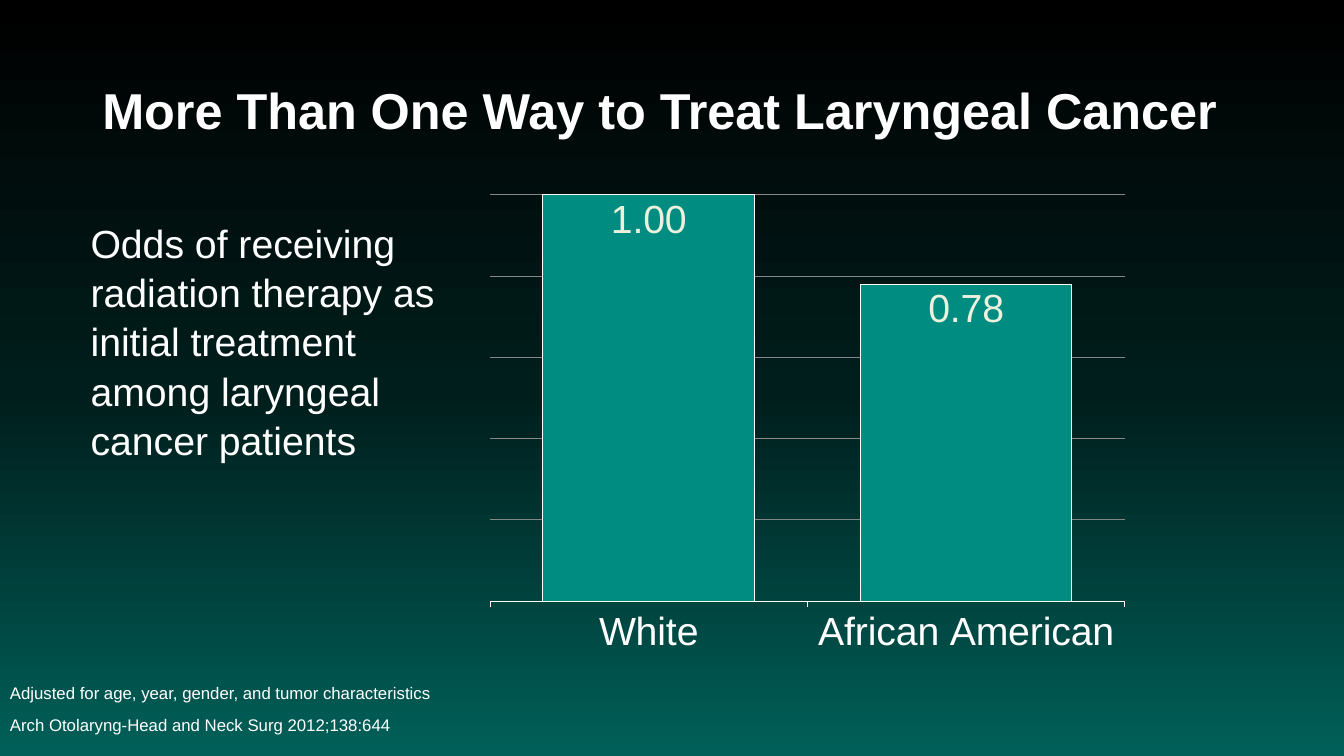
import copy
import dataclasses

import lxml.etree
import pptx
import pptx.chart.data
import pptx.dml.color
import pptx.enum.chart
import pptx.enum.text
import pptx.oxml
import pptx.oxml.ns
import pptx.util

Pt = pptx.util.Pt
COLORS = {
    "top": "000000",
    "middle": "001E1C",
    "bottom": "006059",
    "text": "FFFFFF",
    "bar": "008C81",
    "value": "EBF1DD",
    "grid": "868686",
}
GRADIENT = [(0, "top"), (0.52, "middle"), (1, "bottom")]
ODDS = {"White": 1.0, "African American": 0.78}


@dataclasses.dataclass(frozen=True)
class TextBlock:
    frame: tuple[float, float, float, float]
    lines: tuple[str, ...]
    size: float
    spacing: float
    bold: bool = False
    gap: float = 0
    middle: bool = True


BLOCKS = [
    TextBlock((66, 28.8, 828, 104.4), ("More Than One Way to Treat Laryngeal Cancer",),
              36, 0.9, bold=True),
    TextBlock((0, 473.8, 648, 66.2),
              ("Adjusted for age, year, gender, and tumor characteristics",
               "Arch Otolaryng-Head and Neck Surg 2012;138:644"),
              12, 0.9, gap=10),
    TextBlock((57.6, 151.2, 275, 177.1),
              ("Odds of receiving radiation therapy as initial treatment "
               "among laryngeal cancer patients",),
              28, 1.05, middle=False),
]


def color(name: str) -> pptx.dml.color.RGBColor:
    return pptx.dml.color.RGBColor.from_string(COLORS[name])


def set_font(font, size: float, name: str = "text", bold: bool = False) -> None:
    for key, value in {"name": "Arial", "size": Pt(size), "bold": bold}.items():
        setattr(font, key, value)
    font.color.rgb = color(name)


def set_line(line, name: str) -> None:
    line.color.rgb = color(name)
    line.width = Pt(0.75)


def paint_background(page) -> None:
    fill = page.background.fill
    fill.gradient()
    fill.gradient_angle = 270
    stops = page._element.find(".//" + pptx.oxml.ns.qn("a:gsLst"))
    stops.insert(1, copy.deepcopy(stops[0]))
    for stop, (position, name) in zip(fill.gradient_stops, GRADIENT):
        stop.position = position
        stop.color.rgb = color(name)


def add_text(page, block: TextBlock) -> None:
    box = page.shapes.add_textbox(*map(Pt, block.frame))
    anchors = pptx.enum.text.MSO_ANCHOR
    sizing = pptx.enum.text.MSO_AUTO_SIZE
    frame_format = {
        "word_wrap": True,
        "auto_size": sizing.NONE if block.middle else sizing.SHAPE_TO_FIT_TEXT,
        "vertical_anchor": anchors.MIDDLE if block.middle else anchors.TOP,
    }
    for key, value in frame_format.items():
        setattr(box.text_frame, key, value)
    for index, line in enumerate(block.lines):
        para = box.text_frame.add_paragraph() if index else box.text_frame.paragraphs[0]
        para.line_spacing = block.spacing
        para.space_before = Pt(block.gap if index else 0)
        span = para.add_run()
        span.text = line
        set_font(span.font, block.size, bold=block.bold)


def fix_plot_area(chart) -> None:
    area = chart._chartSpace.chart.plotArea
    for old in area.findall(pptx.oxml.ns.qn("c:layout")):
        area.remove(old)
    layout = pptx.oxml.parse_xml(f"<c:layout {pptx.oxml.ns.nsdecls('c')}/>")
    manual = lxml.etree.SubElement(layout, pptx.oxml.ns.qn("c:manualLayout"))
    settings = {"layoutTarget": "inner", "xMode": "edge", "yMode": "edge",
                "x": "0.02", "y": "0.02", "w": "0.96", "h": "0.85"}
    for key, value in settings.items():
        lxml.etree.SubElement(manual, pptx.oxml.ns.qn(f"c:{key}")).set("val", value)
    area.insert(0, layout)


def add_odds_chart(page) -> None:
    enums = pptx.enum.chart
    data = pptx.chart.data.CategoryChartData()
    data.categories = list(ODDS)
    data.add_series("Series 1", list(ODDS.values()))
    chart = page.shapes.add_chart(enums.XL_CHART_TYPE.COLUMN_CLUSTERED,
                                  *map(Pt, (340.6, 132.5, 472.3, 341.3)), data).chart
    chart.has_legend = False
    chart.has_title = False
    chart.font.name = "Lato"
    chart.font.size = Pt(20)
    fix_plot_area(chart)

    # Axes
    categories = chart.category_axis
    categories.major_tick_mark = enums.XL_TICK_MARK.OUTSIDE
    set_font(categories.tick_labels.font, 28)
    set_line(categories.format.line, "text")
    scale = {"minimum_scale": 0, "maximum_scale": 1, "major_unit": 0.2,
             "has_major_gridlines": True, "visible": False}
    for key, value in scale.items():
        setattr(chart.value_axis, key, value)
    set_line(chart.value_axis.major_gridlines.format.line, "grid")

    # Bars and their values
    plot = chart.plots[0]
    plot.gap_width = 50
    plot.vary_by_categories = False
    bars = plot.series[0]
    bars.format.fill.solid()
    bars.format.fill.fore_color.rgb = color("bar")
    set_line(bars.format.line, "text")
    labels = bars.data_labels
    label_format = {"show_value": True, "number_format": "#,##0.00",
                    "number_format_is_linked": False,
                    "position": enums.XL_LABEL_POSITION.INSIDE_END}
    for key, value in label_format.items():
        setattr(labels, key, value)
    set_font(labels.font, 28, "value")


def main() -> None:
    deck = pptx.Presentation()
    deck.slide_width, deck.slide_height = Pt(960), Pt(540)
    page = deck.slides.add_slide(deck.slide_layouts[6])
    paint_background(page)
    for block in BLOCKS:
        add_text(page, block)
    add_odds_chart(page)
    deck.save("out.pptx")


if __name__ == "__main__":
    main()
